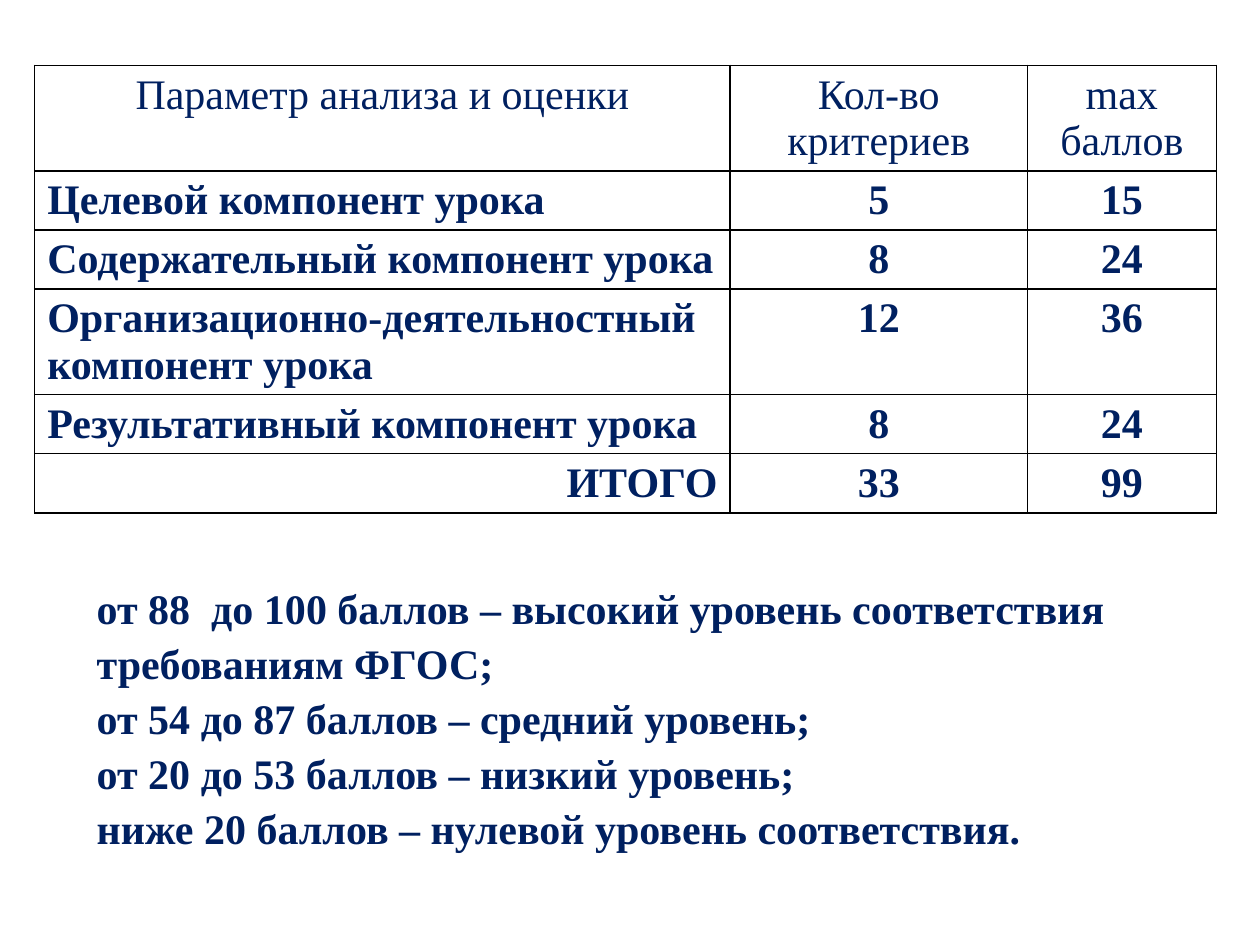
from lxml import etree
from pptx import Presentation
from pptx.dml.color import RGBColor
from pptx.enum import text
from pptx.oxml.ns import qn
from pptx.util import Cm, Pt

NAVY = RGBColor(0x00, 0x20, 0x60)
WHITE = RGBColor(0xFF, 0xFF, 0xFF)
BLACK = RGBColor(0x00, 0x00, 0x00)
FONT = "Times New Roman"
LEFT, CENTER, RIGHT = text.PP_ALIGN.LEFT, text.PP_ALIGN.CENTER, text.PP_ALIGN.RIGHT

# Content
ROWS = [
    ("Параметр анализа и оценки", "Кол-во критериев", "max баллов"),
    ("Целевой компонент урока", "5", "15"),
    ("Содержательный компонент урока", "8", "24"),
    ("Организационно-деятельностный компонент урока", "12", "36"),
    ("Результативный компонент урока", "8", "24"),
    ("ИТОГО", "33", "99"),
]
LEVELS = [
    "от 88  до 100 баллов – высокий уровень соответствия требованиям ФГОС;",
    "от 54 до 87 баллов – средний уровень;",
    "от 20 до 53 баллов – низкий уровень;",
    "ниже 20 баллов – нулевой уровень соответствия.",
]
COLUMN_WIDTHS = [14.02, 5.99, 3.81]
ONE_LINE, TWO_LINES = 1.19, 2.12
ROW_HEIGHTS = [TWO_LINES, ONE_LINE, ONE_LINE, TWO_LINES, ONE_LINE, ONE_LINE]


def write(para, words, align=LEFT, bold=True):
    para.alignment = align
    span = para.add_run()
    span.text = words
    span.font.name = FONT
    span.font.size = Pt(24)
    span.font.bold = bold
    span.font.color.rgb = NAVY


def draw_borders(cell):
    props = cell._tc.get_or_add_tcPr()
    for index, side in enumerate(("a:lnL", "a:lnR", "a:lnT", "a:lnB")):
        line = etree.Element(qn(side), w=str(Pt(1)))
        fill = etree.SubElement(line, qn("a:solidFill"))
        etree.SubElement(fill, qn("a:srgbClr"), val=str(BLACK))
        props.insert(index, line)


def cell_align(row, column):
    if row == 0 or column > 0:
        return CENTER
    return RIGHT if row == len(ROWS) - 1 else LEFT


deck = Presentation()
deck.slide_width, deck.slide_height = Cm(25.4), Cm(19.05)
page = deck.slides.add_slide(deck.slide_layouts[6])

# Table of criteria
table = page.shapes.add_table(
    len(ROWS), len(COLUMN_WIDTHS), Cm(0.7), Cm(1.32),
    Cm(sum(COLUMN_WIDTHS)), Cm(sum(ROW_HEIGHTS))).table
for column, width in zip(table.columns, COLUMN_WIDTHS):
    column.width = Cm(width)
for r, (words, height) in enumerate(zip(ROWS, ROW_HEIGHTS)):
    table.rows[r].height = Cm(height)
    for c, word in enumerate(words):
        cell = table.cell(r, c)
        cell.fill.solid()
        cell.fill.fore_color.rgb = WHITE
        draw_borders(cell)
        write(cell.text_frame.paragraphs[0], word, cell_align(r, c), bold=r > 0)

# Score levels
box = page.shapes.add_textbox(Cm(1.7), Cm(11.53), Cm(21.59), Cm(5.38))
frame = box.text_frame
frame.word_wrap = True
frame.auto_size = text.MSO_AUTO_SIZE.SHAPE_TO_FIT_TEXT
for index, level in enumerate(LEVELS):
    para = frame.add_paragraph() if index else frame.paragraphs[0]
    para.line_spacing = 1.09
    write(para, level)

deck.save("out.pptx")
